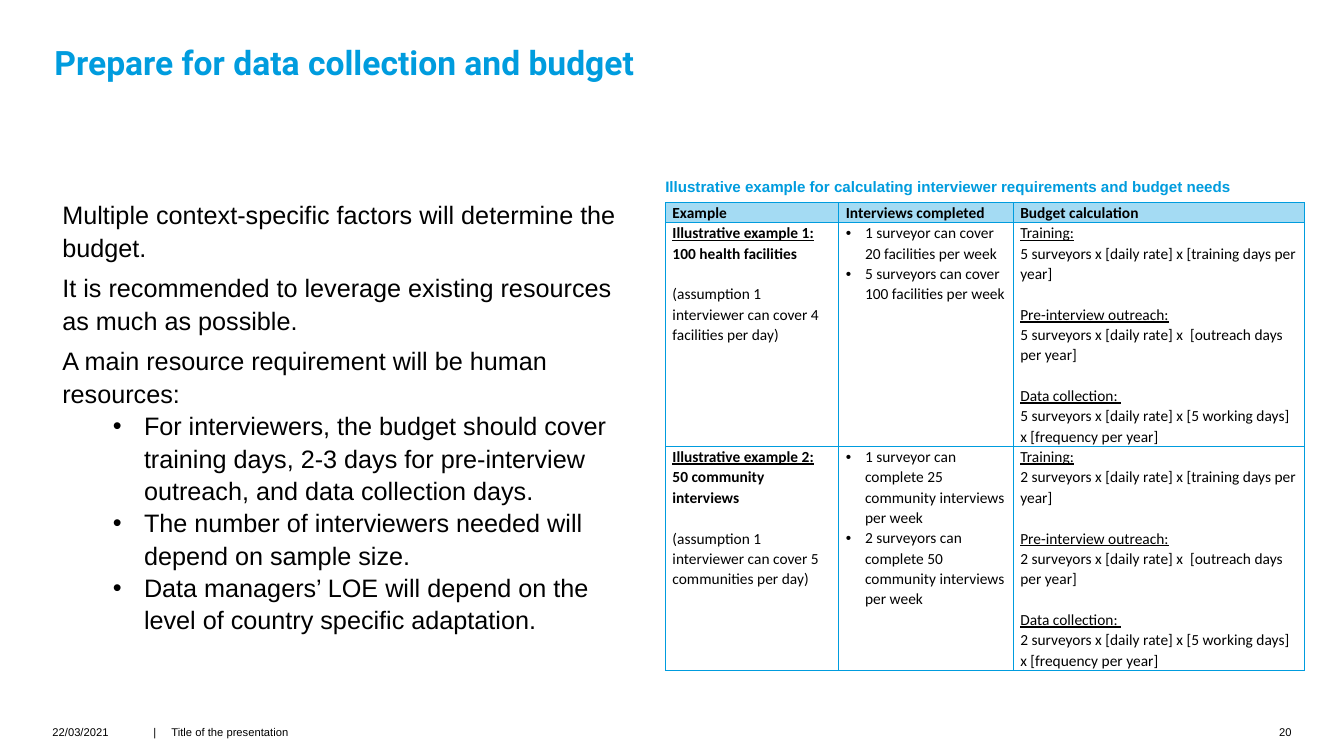
from pptx import Presentation
from pptx.util import Inches, Pt
from pptx.dml.color import RGBColor
from pptx.enum.text import MSO_ANCHOR, PP_ALIGN
from pptx.oxml.ns import qn
from lxml.etree import SubElement

COLORS = {"text": "000000", "blue": "009CDE", "header": "A4DBF3"}
U = Inches(0.01)


def write(tf, items, size, font="Arial", color="text", spacing=1.0, indent=(0, 0), gap=0):
    tf.word_wrap = True
    for i, (text, style) in enumerate(items):
        p = tf.paragraphs[0] if i == 0 else tf.add_paragraph()
        p.text = text
        p.line_spacing = spacing
        if "g" in style:
            p.space_before = Pt(gap)
        if "•" in style:
            pPr = p._p.get_or_add_pPr()
            pPr.set("marL", str(indent[0] * U))
            pPr.set("indent", str(-indent[1] * U))
            SubElement(pPr, qn("a:buFont")).set("typeface", "Arial")
            SubElement(pPr, qn("a:buChar")).set("char", "•")
        for r in p.runs:
            r.font.size = Pt(size)
            r.font.name = font
            r.font.bold = "b" in style
            r.font.underline = "u" in style
            r.font.color.rgb = RGBColor.from_string(COLORS[color])


def add_text(box, items, size, margins=(0, 0, 0, 0), **kw):
    tf = s.shapes.add_textbox(*(v * U for v in box)).text_frame
    tf.margin_left, tf.margin_top, tf.margin_right, tf.margin_bottom = (m * U for m in margins)
    write(tf, items, size, **kw)
    return tf


prs = Presentation()
prs.slide_width, prs.slide_height = 1333 * U, 750 * U
s = prs.slides.add_slide(prs.slide_layouts[6])

add_text((52, 720, 86, 20), [("22/03/2021", "")], 8)
footer = add_text((152, 720, 325, 20), [("|\tTitle of the presentation", "")], 8)
tabs = SubElement(footer.paragraphs[0]._p.get_or_add_pPr(), qn("a:tabLst"))
SubElement(tabs, qn("a:tab"), pos=str(18 * U), algn="l")
number = add_text((1249, 720, 32, 20), [("20", "")], 8)
number.paragraphs[0].alignment = PP_ALIGN.RIGHT

title = add_text((52, 38, 892, 44), [("Prepare for data collection and budget", "b")], 24,
                 (2, 0, 39, 0), font="Roboto", color="blue", spacing=0.9)
title.vertical_anchor = MSO_ANCHOR.BOTTOM
add_text((650, 173, 598, 28),
         [("Illustrative example for calculating interviewer requirements and budget needs", "b")],
         10.8, (10, 5, 10, 5), color="blue", spacing=0.9)

body = add_text((52, 191, 571, 481), [
    ("Multiple context-specific factors will determine the budget.", ""),
    ("It is recommended to leverage existing resources as much as possible.", "g"),
    ("A main resource requirement will be human resources:", "g"),
    ("For interviewers, the budget should cover training days, 2-3 days for pre-interview "
     "outreach, and data collection days.", "•"),
    ("The number of interviewers needed will depend on sample size.", "•"),
    ("Data managers’ LOE will depend on the level of country specific adaptation.", "•"),
], 18, (10, 5, 10, 5), spacing=1.07, indent=(81, 31), gap=6)
for p in body.paragraphs[3:]:
    p.level = 1

rows = [[[(h, "b")] for h in ("Example", "Interviews completed", "Budget calculation")]]
examples = [
    ("1", "100 health facilities", "4 facilities", 5,
     ["1 surveyor can cover  20 facilities per week",
      "5 surveyors can cover 100 facilities per week"]),
    ("2", "50 community interviews", "5 communities", 2,
     ["1 surveyor can complete 25 community interviews per week",
      "2 surveyors can complete 50 community interviews per week"]),
]
for no, sample, rate, n, coverage in examples:
    cost = f"{n} surveyors x [daily rate] x"
    rows.append([
        [(f"Illustrative example {no}:", "bu"), (sample, "b"),
         (f"(assumption 1 interviewer can cover {rate} per day)", "g")],
        [(line, "•") for line in coverage],
        [("Training:", "u"), (f"{cost} [training days per year]", ""),
         ("Pre-interview outreach:", "ug"), (f"{cost}  [outreach days per year]", ""),
         ("Data collection: ", "ug"),
         (f"{cost} [5 working days] x [frequency per year]", "")],
    ])

table = s.shapes.add_table(3, 3, 660 * U, 201 * U, 634 * U, 464 * U).table
table.first_row = table.horz_banding = False
for col, width in zip(table.columns, (172, 173, 289)):
    col.width = width * U
for row, height in zip(table.rows, (20, 222, 222)):
    row.height = height * U
for i, row in enumerate(rows):
    for j, items in enumerate(row):
        cell = table.cell(i, j)
        cell.margin_left = cell.margin_right = 7 * U
        cell.margin_top = cell.margin_bottom = 0
        write(cell.text_frame, items, 11, font="Calibri", spacing=1.07, indent=(19, 19), gap=14.6)
        tcPr = cell._tc.get_or_add_tcPr()
        for side in ("lnL", "lnR", "lnT", "lnB"):
            ln = SubElement(tcPr, qn(f"a:{side}"), w=str(Pt(0.75)))
            fill = SubElement(ln, qn("a:solidFill"))
            SubElement(fill, qn("a:srgbClr"), val=COLORS["blue"])
        if i == 0:
            cell.fill.solid()
            cell.fill.fore_color.rgb = RGBColor.from_string(COLORS["header"])
        else:
            cell.fill.background()

prs.save("out.pptx")
